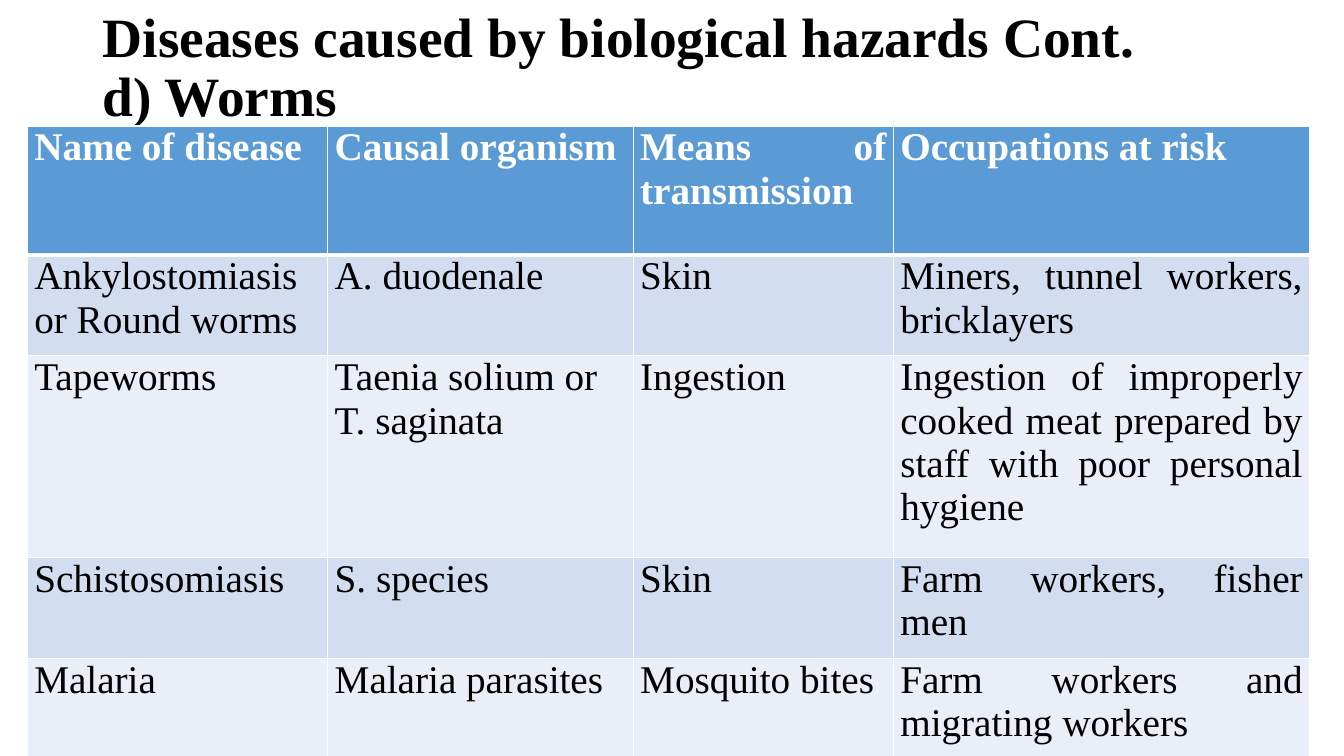
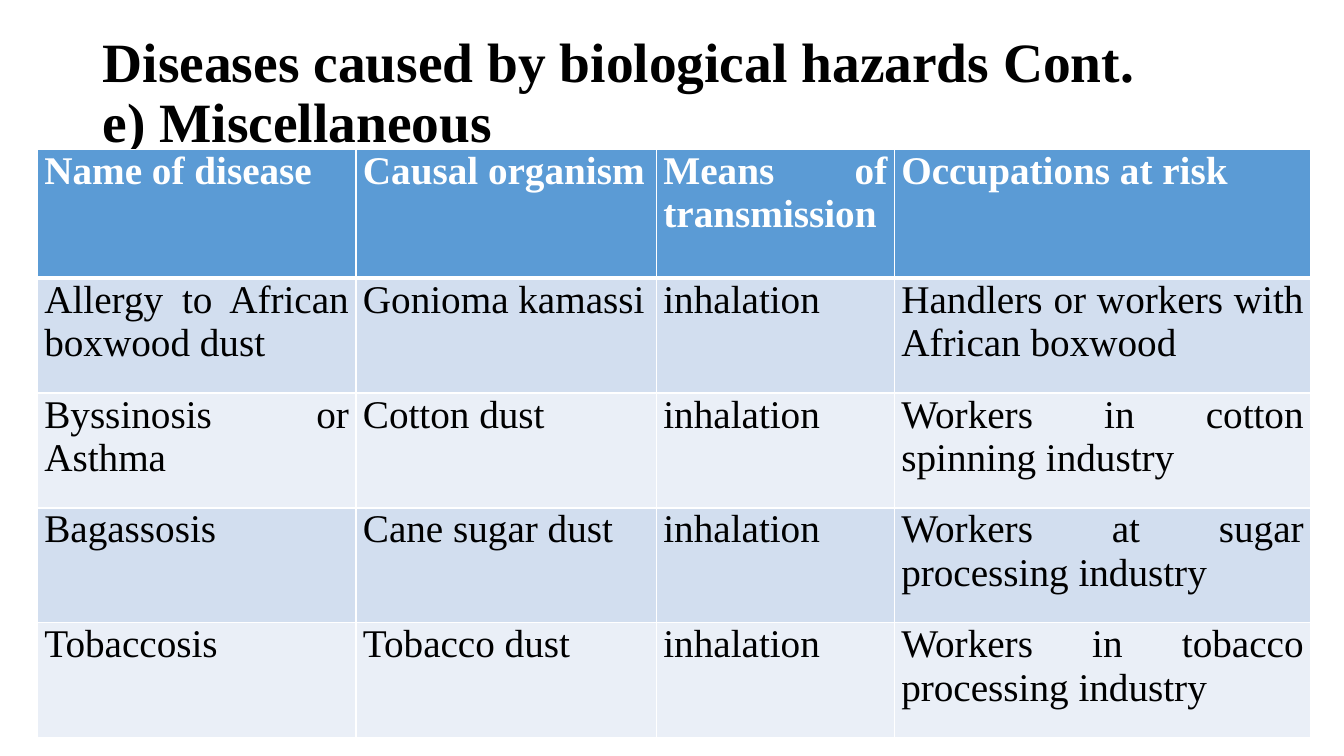
from dataclasses import dataclass

from lxml.etree import SubElement
from pptx import Presentation
from pptx.dml.color import RGBColor
from pptx.enum.text import MSO_ANCHOR as Anchor, PP_ALIGN as Align
from pptx.oxml.ns import qn
from pptx.util import Inches, Pt


@dataclass(frozen=True)
class Theme:
    font: str = "Times New Roman"
    ink: str = "000000"
    paper: str = "FFFFFF"
    header_fill: str = "5B9BD5"
    band_fills: tuple = ("D2DEEF", "EAEFF7")
    title_size: float = 39.6
    table_size: float = 28
    thin_line: float = 1
    thick_line: float = 3
    cell_inset: float = 0.07


THEME = Theme()
TITLE = "Diseases caused by biological hazards Cont. "
HEADINGS = ("Name of disease", "Causal organism", "Means of transmission", "Occupations at risk")
HEADER_HEIGHT = 1.28

WORMS = (
    ("Ankylostomiasis or Round worms", "A. duodenale", "Skin",
     "Miners, tunnel workers, bricklayers"),
    ("Tapeworms", ("Taenia solium or ", "T. saginata"), "Ingestion",
     "Ingestion of improperly cooked meat prepared by staff with poor personal hygiene"),
    ("Schistosomiasis", "S. species", "Skin", "Farm workers, fisher men"),
    ("Malaria", "Malaria parasites", "Mosquito bites", "Farm workers and migrating workers"),
)
MISCELLANEOUS = (
    ("Allergy to African boxwood dust", "Gonioma kamassi", "inhalation",
     "Handlers or workers with African boxwood"),
    ("Byssinosis or Asthma", "Cotton dust", "inhalation", "Workers in cotton spinning industry"),
    ("Bagassosis", "Cane sugar dust", "inhalation", "Workers at sugar processing industry"),
    ("Tobaccosis", "Tobacco dust", "inhalation", "Workers in tobacco processing industry"),
)


def write_text(frame, text, *, size, color=THEME.ink, bold=False, align=Align.LEFT, spacing=1.0):
    """Write one paragraph, or one for each item of a tuple; a newline breaks the line."""
    paragraphs = text if isinstance(text, tuple) else (text,)
    for index, content in enumerate(paragraphs):
        paragraph = frame.add_paragraph() if index else frame.paragraphs[0]
        paragraph.text = content
        paragraph.alignment = align
        paragraph.line_spacing = spacing
        for run in paragraph.runs:
            run.font.name = THEME.font
            run.font.size = Pt(size)
            run.font.bold = bold
            run.font.color.rgb = RGBColor.from_string(color)


def set_borders(cell, top, bottom):
    """Draw white cell borders; the lines must precede the fill in the XML."""
    properties = cell._tc.get_or_add_tcPr()
    widths = {"lnL": THEME.thin_line, "lnR": THEME.thin_line, "lnT": top, "lnB": bottom}
    for index, (side, width) in enumerate(widths.items()):
        line = SubElement(properties, qn(f"a:{side}"), w=str(Pt(width)))
        fill = SubElement(line, qn("a:solidFill"))
        SubElement(fill, qn("a:srgbClr"), val=THEME.paper)
        properties.insert(index, line)


def add_title(slide, subtitle, left, top, width, height):
    box = slide.shapes.add_textbox(Inches(left), Inches(top), Inches(width), Inches(height))
    frame = box.text_frame
    frame.word_wrap = True
    frame.vertical_anchor = Anchor.MIDDLE
    write_text(frame, f"{TITLE}\n{subtitle}", size=THEME.title_size, bold=True, spacing=0.9)


def format_cell(cell, text, row_index):
    is_header = row_index == 0
    cell.margin_left = cell.margin_right = Inches(THEME.cell_inset)
    cell.margin_top = cell.margin_bottom = 0
    cell.vertical_anchor = Anchor.TOP
    fill = THEME.header_fill if is_header else THEME.band_fills[(row_index - 1) % 2]
    cell.fill.solid()
    cell.fill.fore_color.rgb = RGBColor.from_string(fill)
    # The thick rule separates the header from the first body row
    set_borders(cell,
                top=THEME.thick_line if row_index == 1 else THEME.thin_line,
                bottom=THEME.thick_line if is_header else THEME.thin_line)
    write_text(cell.text_frame, text, size=THEME.table_size, bold=is_header,
               color=THEME.paper if is_header else THEME.ink, align=Align.JUSTIFY)


def add_disease_table(slide, body, left, top, column_widths, body_heights):
    rows = (HEADINGS, *body)
    heights = (HEADER_HEIGHT, *body_heights)
    table = slide.shapes.add_table(
        len(rows), len(HEADINGS), Inches(left), Inches(top),
        Inches(sum(column_widths)), Inches(sum(heights))).table
    for column, width in zip(table.columns, column_widths):
        column.width = Inches(width)
    for row_index, (texts, height) in enumerate(zip(rows, heights)):
        table.rows[row_index].height = Inches(height)
        for column_index, text in enumerate(texts):
            format_cell(table.cell(row_index, column_index), text, row_index)


def add_disease_slide(presentation, subtitle, body, *, title_top, title_height,
                      table_left, column_widths, body_heights):
    """Place a title with the disease table directly below it."""
    slide = presentation.slides.add_slide(presentation.slide_layouts[6])
    add_title(slide, subtitle, 0.92, title_top, 11.5, title_height)
    add_disease_table(slide, body, table_left, title_top + title_height,
                      column_widths, body_heights)


def main():
    presentation = Presentation()
    presentation.slide_width = Inches(13.33)
    presentation.slide_height = Inches(7.5)

    add_disease_slide(presentation, "d) Worms", WORMS, title_top=0.12, title_height=1.13,
                      table_left=0.27, column_widths=(2.98, 3.03, 2.58, 4.13),
                      body_heights=(1, 2, 1, 1))
    add_disease_slide(presentation, "e) Miscellaneous", MISCELLANEOUS,
                      title_top=0.4, title_height=1.08,
                      table_left=0.37, column_widths=(3.16, 2.98, 2.36, 4.13),
                      body_heights=(1.14,) * len(MISCELLANEOUS))

    presentation.save("out.pptx")


if __name__ == "__main__":
    main()
